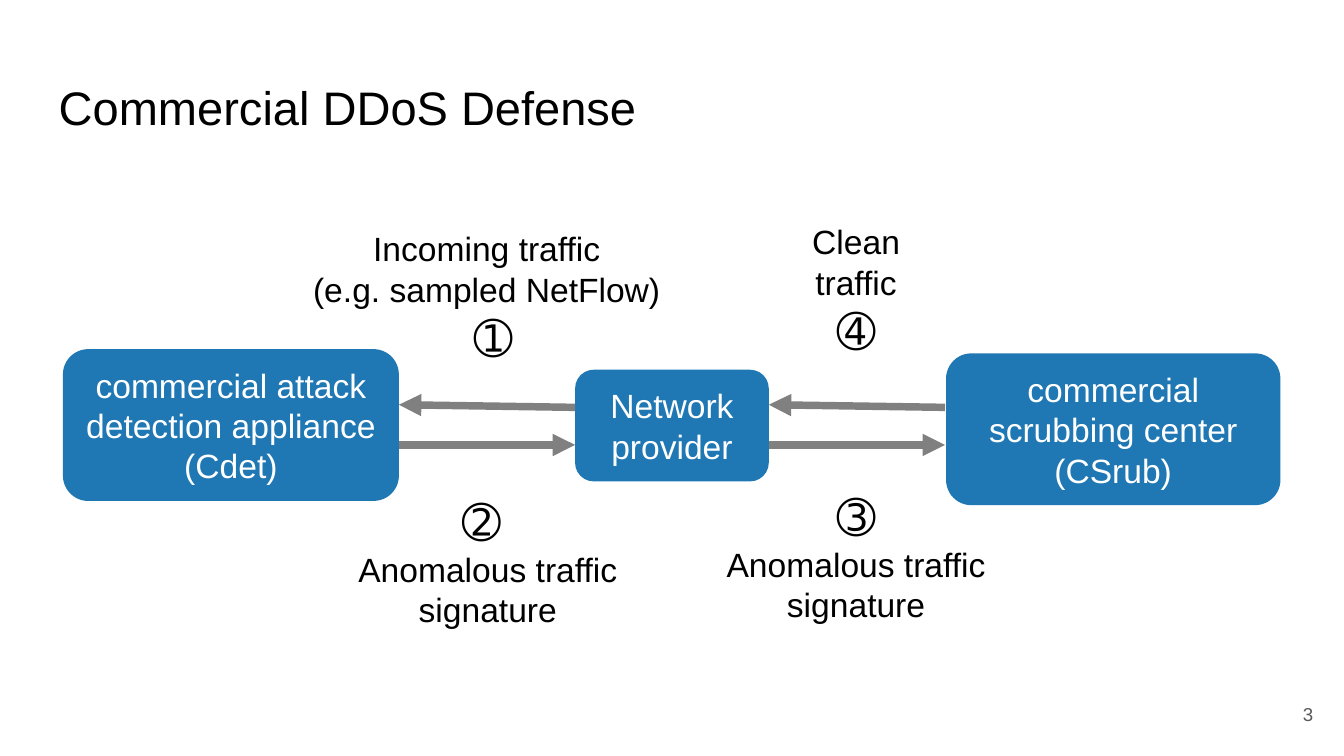
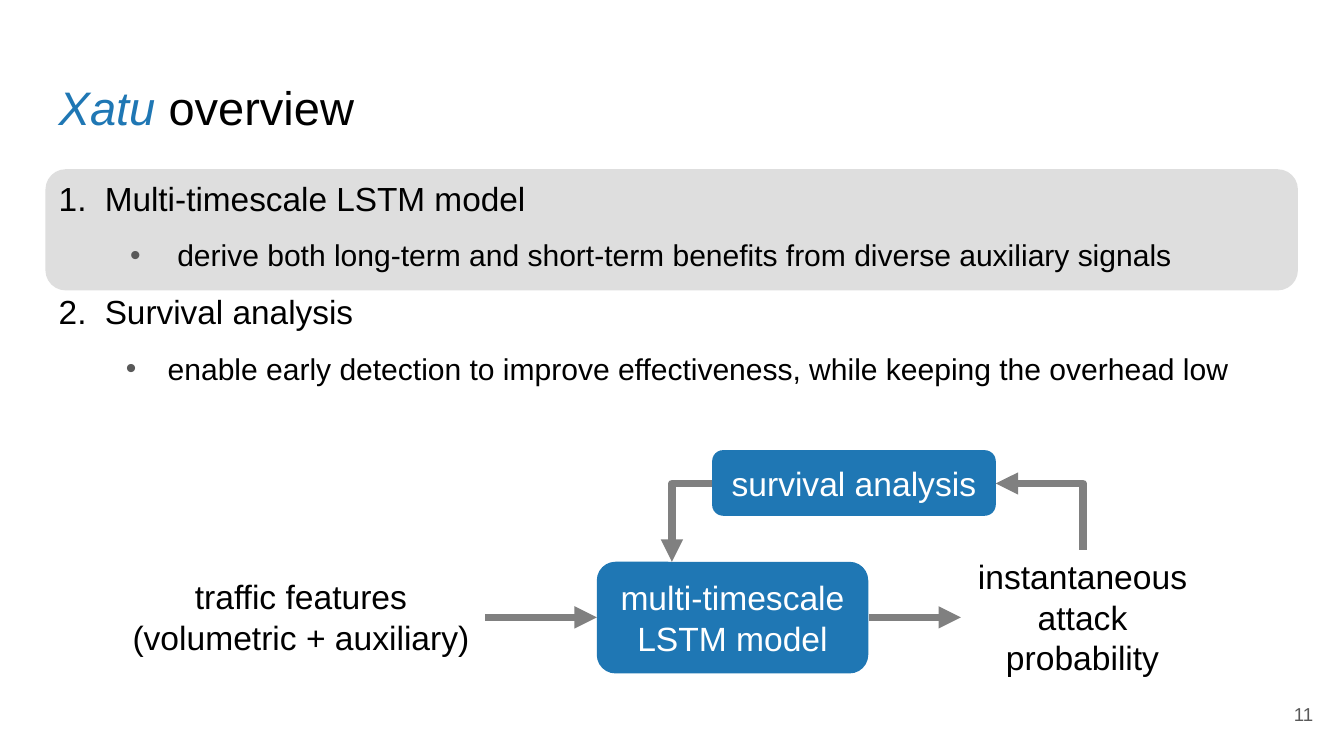
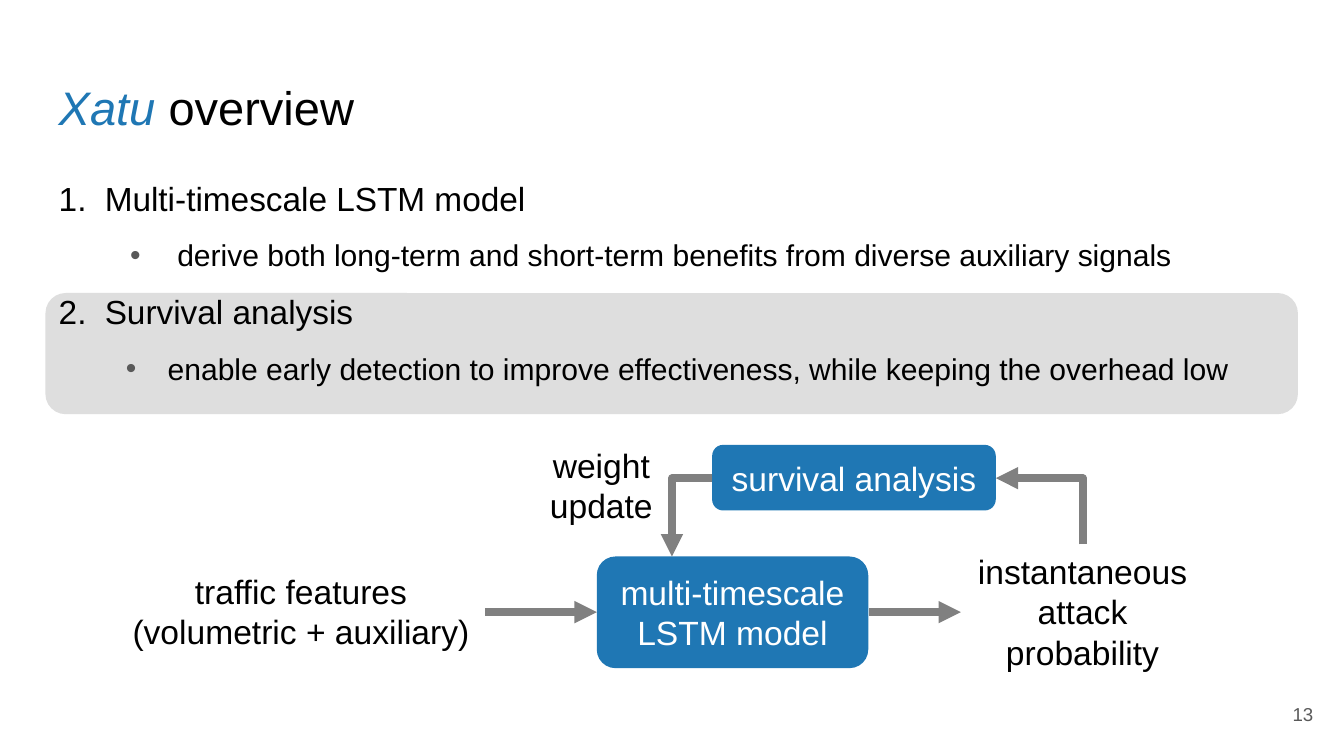
import pptx
import pptx.dml.color
import pptx.enum.shapes
import pptx.enum.text
import pptx.oxml
import pptx.oxml.ns
import pptx.util
from pptx.util import Cm

FONT = "Arial"
BLUE, GREY, BAND, BLACK, WHITE, MUTED = "1F77B4", "808080", "DEDEDE", "000000", "FFFFFF", "595959"
CIRCLED = "➀➁➂➃"
MARGIN, CONTENT_WIDTH, INSET = 0.86, 23.67, 0.25

color = pptx.dml.color.RGBColor.from_string
qn = pptx.oxml.ns.qn
ALIGN = pptx.enum.text.PP_ALIGN
ANCHOR = pptx.enum.text.MSO_ANCHOR


def add_box(page, place, text="", fill=None):
    """Add centred text, on a rounded box if a fill is given; place is left, top, width, height in cm."""
    lengths = [Cm(value) for value in place]
    if fill:
        box = page.shapes.add_shape(pptx.enum.shapes.MSO_SHAPE.ROUNDED_RECTANGLE, *lengths)
        box.shadow.inherit = False
        box.fill.solid()
        box.fill.fore_color.rgb = color(fill)
        box.line.fill.background()
        box.text_frame.vertical_anchor = ANCHOR.MIDDLE
    else:
        box = page.shapes.add_textbox(*lengths)
    box.text_frame.word_wrap = True
    box.text_frame.text = text
    for para in box.text_frame.paragraphs:
        para.alignment = ALIGN.CENTER
        for span in para.runs:
            span.font.name = FONT
            span.font.size = pptx.util.Pt(25 if span.text.strip() in CIRCLED else 18)
            span.font.color.rgb = color(WHITE if fill else BLACK)
    return box


def add_arrow(page, start, end, bend=None):
    """Add an arrow; bend names the direction, "across" or "up", in which a one-corner arrow leaves."""
    kinds = pptx.enum.shapes.MSO_CONNECTOR
    if bend == "up":
        # Place the connector as it lies before the 270 degree turn about its centre.
        middle_x, middle_y = (start[0] + end[0]) / 2, (start[1] + end[1]) / 2
        reach_x, reach_y = start[0] - middle_x, start[1] - middle_y
        start = (middle_x - reach_y, middle_y + reach_x)
        end = (middle_x + reach_y, middle_y - reach_x)
    arrow = page.shapes.add_connector(kinds.ELBOW if bend else kinds.STRAIGHT,
                                      *[Cm(value) for value in start + end])
    arrow.line.color.rgb = color(GREY)
    arrow.line.width = pptx.util.Pt(4)
    properties = arrow.element.spPr
    if bend:
        properties.find(qn("a:prstGeom")).set("prst", "bentConnector2")
    if bend == "up":
        properties.find(qn("a:xfrm")).set("rot", str(270 * 60000))
    tail = pptx.oxml.parse_xml(f'<a:tailEnd {pptx.oxml.ns.nsdecls("a")} type="triangle"/>')
    properties.find(qn("a:ln")).append(tail)
    properties.append(pptx.oxml.parse_xml(f'<a:effectLst {pptx.oxml.ns.nsdecls("a")}/>'))


deck = pptx.Presentation()
deck.slide_width, deck.slide_height = Cm(25.4), Cm(14.29)
TITLE_AND_CONTENT, TITLE_ONLY = deck.slide_layouts[1], deck.slide_layouts[5]

# Titles and slide numbers
overview_title = [("Xatu", BLUE), (" overview", BLACK)]
pages = []
for layout, number, title_spans in [
    (TITLE_ONLY, 3, [("Commercial DDoS Defense", BLACK)]),
    (TITLE_AND_CONTENT, 11, overview_title),
    (TITLE_AND_CONTENT, 13, overview_title),
]:
    page = deck.slides.add_slide(layout)
    pages.append(page)
    title = page.shapes.title
    title.left, title.top, title.width, title.height = Cm(MARGIN), Cm(1.24), Cm(CONTENT_WIDTH), Cm(1.6)
    para = title.text_frame.paragraphs[0]
    para.alignment = ALIGN.LEFT
    for text, ink in title_spans:
        span = para.add_run()
        span.text = text
        span.font.name = FONT
        span.font.size = pptx.util.Pt(25.2)
        span.font.italic = ink == BLUE
        span.font.color.rgb = color(ink)

    number_box = add_box(page, (23.55, 12.95, 1.52, 1.09), str(number))
    number_box.text_frame.paragraphs[0].alignment = ALIGN.RIGHT
    number_font = number_box.text_frame.paragraphs[0].runs[0].font
    number_font.size = pptx.util.Pt(10)
    number_font.color.rgb = color(MUTED)

    for box, anchor in [(title, ANCHOR.TOP), (number_box, ANCHOR.MIDDLE)]:
        frame = box.text_frame
        frame.auto_size = pptx.enum.text.MSO_AUTO_SIZE.NONE
        frame.vertical_anchor = anchor
        frame.margin_left = frame.margin_right = frame.margin_top = frame.margin_bottom = Cm(INSET)

# Commercial defense: three parties and the traffic between them
defense_page = pages[0]
for place, text in [
    ((10.87, 6.99, 3.66, 2.11), "Network provider"),
    ((1.19, 6.6, 6.35, 2.87), "commercial attack detection appliance\n(Cdet)"),
    ((17.88, 6.68, 6.32, 2.87), "commercial scrubbing center\n(CSrub)"),
]:
    add_box(defense_page, place, text, BLUE)
for left, right in [(7.54, 10.87), (14.53, 17.86)]:
    add_arrow(defense_page, (left, 8.41), (right, 8.41))
    add_arrow(defense_page, (right, 7.7), (left, 7.65))
for left, top, text in [
    (5.49, 4.19, "Incoming traffic\n(e.g. sampled NetFlow)\n ➀"),
    (12.47, 4.06, "Clean\ntraffic\n➃"),
    (12.47, 9.09, "➂\nAnomalous traffic\nsignature"),
    (5.51, 9.19, "➁ \nAnomalous traffic\nsignature"),
]:
    add_box(defense_page, (left, top, 7.42, 2.87), text)

# Overview: the same list and diagram, with one point highlighted
LIST = [
    # text, level, size, left margin, hanging indent, bullet
    ("Multi-timescale LSTM model", 0, 17.9, 0.87, 0.87, '<a:buAutoNum {} type="arabicPeriod"/>'),
    ("derive both long-term and short-term benefits from diverse auxiliary signals",
     1, 16.1, 2.24, 0.89, '<a:buChar {} char="•"/>'),
    ("Survival analysis", 0, 17.9, 0.87, 0.87, '<a:buAutoNum {} type="arabicPeriod" startAt="2"/>'),
    ("enable early detection to improve effectiveness, while keeping the overhead low",
     1, 16.1, 2.06, 0.79, '<a:buChar {} char="•"/>'),
]
namespace = pptx.oxml.ns.nsdecls("a")
for page, band_top, rise in [(pages[1], 3.2, 0), (pages[2], 5.54, 0.1)]:
    band = add_box(page, (MARGIN, band_top, CONTENT_WIDTH, 2.29), fill=BAND)
    page.shapes.title.element.addprevious(band.element)

    body = page.placeholders[1]
    body.left, body.top, body.width, body.height = Cm(MARGIN), Cm(3.2), Cm(CONTENT_WIDTH), Cm(5.08)
    frame = body.text_frame
    frame.auto_size = pptx.enum.text.MSO_AUTO_SIZE.NONE
    frame.margin_left = frame.margin_right = frame.margin_top = frame.margin_bottom = Cm(INSET)
    frame.text = "\n".join(item[0] for item in LIST)
    for para, (text, level, size, margin, hanging, bullet) in zip(frame.paragraphs, LIST):
        para.level = level
        properties = para._p.get_or_add_pPr()
        properties.set("marL", str(Cm(margin)))
        properties.set("indent", str(-Cm(hanging)))
        bullet_ink = MUTED if level else BLACK
        for xml in [f'<a:buClr {namespace}><a:srgbClr val="{bullet_ink}"/></a:buClr>',
                    f'<a:buFont {namespace} typeface="{FONT}"/>',
                    bullet.format(namespace)]:
            properties.append(pptx.oxml.parse_xml(xml))
        para.line_spacing = 0.9
        para.space_before = pptx.util.Pt(0)
        para.space_after = pptx.util.Pt(12)
        font = para.runs[0].font
        font.name = FONT
        font.size = pptx.util.Pt(size)
        font.color.rgb = color(BLACK)

    for left, top, width, height, text, fill in [
        (2.21, 10.77, 6.96, 1.8, "traffic features\n(volumetric + auxiliary)", None),
        (18.16, 10.39, 4.6, 2.57, "instantaneous attack probability", None),
        (11.28, 10.62, 5.13, 2.11, "multi-timescale LSTM model", BLUE),
        (13.46, 8.51, 5.36, 1.24, "survival analysis", BLUE),
    ]:
        add_box(page, (left, top - rise, width, height), text, fill)
    for x1, y1, x2, y2, bend in [
        (9.17, 11.67, 11.28, 11.67, None),
        (16.43, 11.67, 18.16, 11.67, None),
        (20.47, 10.39, 18.82, 9.14, "up"),
        (13.46, 9.14, 12.7, 10.62, "across"),
    ]:
        add_arrow(page, (x1, y1 - rise), (x2, y2 - rise), bend)

add_box(pages[2], (10.03, 8.28, 2.67, 1.8), "weight update")

deck.save("out.pptx")
